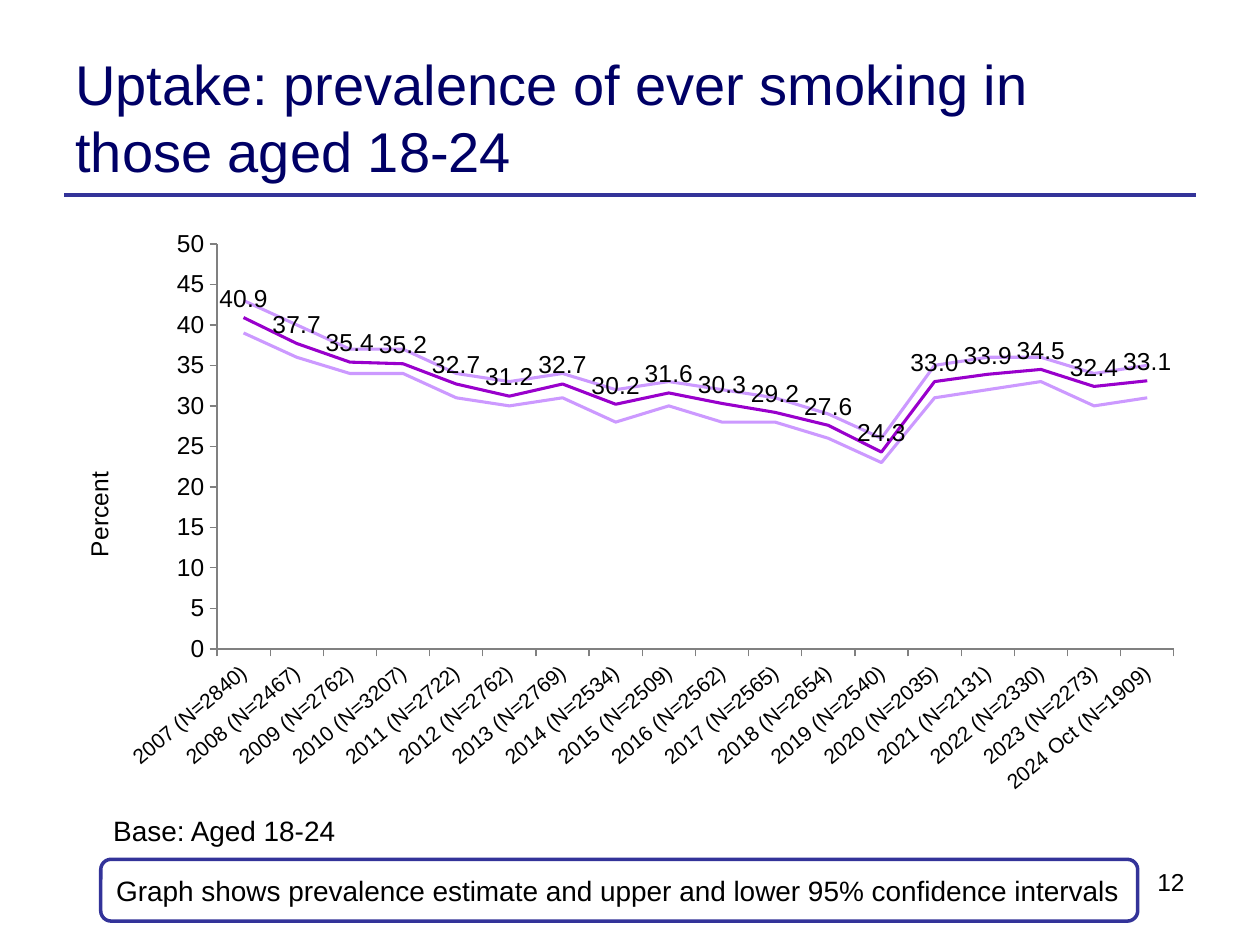
from dataclasses import dataclass

from lxml import etree
from pptx import Presentation
from pptx.chart.data import CategoryChartData
from pptx.dml.color import RGBColor
from pptx.enum import chart as ch, shapes, text
from pptx.oxml import ns
from pptx.util import Inches, Pt

FONT, BLACK, NAVY = "Arial", "000000", "333399"


@dataclass
class Line:
    name: str
    color: str
    vals: list[float]


YEARS = [f"{2007 + i}{' Oct' if i == 17 else ''} (N={n})" for i, n in enumerate(
    [2840, 2467, 2762, 3207, 2722, 2762, 2769, 2534, 2509,
     2562, 2565, 2654, 2540, 2035, 2131, 2330, 2273, 1909])]
LINES = [
    Line("Prevalence", "9900CC",
         [40.9, 37.7, 35.4, 35.2, 32.7, 31.2, 32.7, 30.2, 31.6,
          30.3, 29.2, 27.6, 24.3, 33, 33.9, 34.5, 32.4, 33.1]),
    Line("Upper 95% CI", "CC99FF",
         [43, 40, 37, 37, 34, 33, 34, 32, 33, 32, 31, 29, 26, 35, 36, 36, 34, 35]),
    Line("Lower 95% CI", "CC99FF",
         [39, 36, 34, 34, 31, 30, 31, 28, 30, 28, 28, 26, 23, 31, 32, 33, 30, 31]),
]


def rgb(code: str) -> RGBColor:
    return RGBColor.from_string(code)


def style(font, size: float, color: str = BLACK) -> None:
    font.name, font.size, font.bold = FONT, Pt(size), False
    font.color.rgb = rgb(color)


def write(shape, words: str, size: float = 16, color: str = BLACK, wrap: bool = True,
          align=text.PP_ALIGN.LEFT, anchor=text.MSO_ANCHOR.TOP) -> None:
    frame = shape.text_frame
    frame.word_wrap, frame.vertical_anchor = wrap, anchor
    para = frame.paragraphs[0]
    para.alignment = align
    run = para.add_run()
    run.text = words
    style(run.font, size, color)


def place(parent, **spots: float) -> None:
    """Give a chart part a manual layout, as fractions of the chart."""
    layout = parent.find(ns.qn("c:layout"))
    if layout is None:
        layout = etree.Element(ns.qn("c:layout"))
        parent.insert(0, layout)
    manual = etree.SubElement(layout, ns.qn("c:manualLayout"))
    if "w" in spots:
        etree.SubElement(manual, ns.qn("c:layoutTarget")).set("val", "inner")
    for key in ("xMode", "yMode"):
        etree.SubElement(manual, ns.qn(f"c:{key}")).set("val", "edge")
    for key, val in spots.items():
        etree.SubElement(manual, ns.qn(f"c:{key}")).set("val", str(val))


def set_axis(axis, size: float) -> None:
    axis.has_major_gridlines = False
    axis.major_tick_mark = ch.XL_TICK_MARK.OUTSIDE
    axis.minor_tick_mark = ch.XL_TICK_MARK.NONE
    axis.format.line.color.rgb = rgb("808080")
    axis.format.line.width = Pt(0.75)
    style(axis.tick_labels.font, size)


def add_graph(slide) -> None:
    data = CategoryChartData()
    data.categories = YEARS
    for line in LINES:
        data.add_series(line.name, line.vals)
    chart = slide.shapes.add_chart(
        ch.XL_CHART_TYPE.LINE, Inches(0.35), Inches(1.75),
        Inches(9.15), Inches(4.66), data).chart
    chart.has_legend = chart.has_title = False
    style(chart.font, 18)
    plot = chart.plots[0]
    plot.vary_by_categories = False
    place(chart.element.find(".//" + ns.qn("c:plotArea")), x=0.15, y=0.04, w=0.83, h=0.69)

    # Axes
    years, rate = chart.category_axis, chart.value_axis
    set_axis(years, 12)
    set_axis(rate, 14)
    years.tick_labels.font  # the text body must exist before it is turned
    years.format.line.width = Pt(0.75)
    body = years._element.find(ns.qn("c:txPr")).find(ns.qn("a:bodyPr"))
    body.set("rot", "-2400000")
    body.set("vert", "horz")
    rate.minimum_scale, rate.maximum_scale, rate.major_unit = 0, 50, 5
    rate.tick_labels.number_format = "0"
    rate.tick_labels.number_format_is_linked = False
    title = rate.axis_title
    run = title.text_frame.paragraphs[0].add_run()
    run.text = "Percent"
    style(run.font, 14)
    turn = title._element.find(".//" + ns.qn("a:bodyPr"))
    turn.set("rot", "-5400000")
    turn.set("vert", "horz")
    place(title._element, x=0.03, y=0.42)

    # Estimate and interval lines
    for line, series in zip(LINES, plot.series):
        series.smooth = False
        series.marker.style = ch.XL_MARKER_STYLE.NONE
        series.format.line.color.rgb = rgb(line.color)
        series.format.line.width = Pt(1.75)
    labels = plot.series[0].data_labels
    labels.show_value = True
    labels.position = ch.XL_LABEL_POSITION.ABOVE
    labels.number_format, labels.number_format_is_linked = "#,##0.0", False
    style(labels.font, 14)


def add_box(slide, x: float, y: float, w: float, h: float):
    return slide.shapes.add_textbox(Inches(x), Inches(y), Inches(w), Inches(h))


def main() -> None:
    deck = Presentation()
    deck.slide_width, deck.slide_height = Inches(10), Inches(7.5)
    slide = deck.slides.add_slide(deck.slide_layouts[6])

    # Heading and rule
    rule = slide.shapes.add_connector(
        shapes.MSO_CONNECTOR.STRAIGHT, Inches(0.51), Inches(1.55), Inches(9.49), Inches(1.55))
    rule.line.color.rgb, rule.line.width = rgb(NAVY), Pt(2.25)
    etree.SubElement(rule._element.spPr, ns.qn("a:effectLst"))
    write(add_box(slide, 0.5, 0.3, 7.89, 1.25),
          "Uptake: prevalence of ever smoking in those aged 18-24",
          size=32, color="000066", anchor=text.MSO_ANCHOR.MIDDLE)

    add_graph(slide)

    # Page number, note and base
    write(add_box(slide, 6.73, 6.83, 2.77, 0.52), "12", size=14, align=text.PP_ALIGN.RIGHT)
    note = slide.shapes.add_shape(
        shapes.MSO_SHAPE.ROUNDED_RECTANGLE, Inches(0.8), Inches(6.82), Inches(8.23), Inches(0.49))
    note.shadow.inherit = False
    note.fill.solid()
    note.fill.fore_color.rgb = rgb("FFFFFF")
    note.line.color.rgb, note.line.width = rgb(NAVY), Pt(2)
    write(note, "Graph shows prevalence estimate and upper and lower 95% confidence intervals",
          anchor=text.MSO_ANCHOR.MIDDLE)
    base = add_box(slide, 0.8, 6.41, 2.05, 0.37)
    write(base, "Base: Aged 18-24", wrap=False)
    base.text_frame.auto_size = text.MSO_AUTO_SIZE.SHAPE_TO_FIT_TEXT

    deck.save("out.pptx")


if __name__ == "__main__":
    main()
